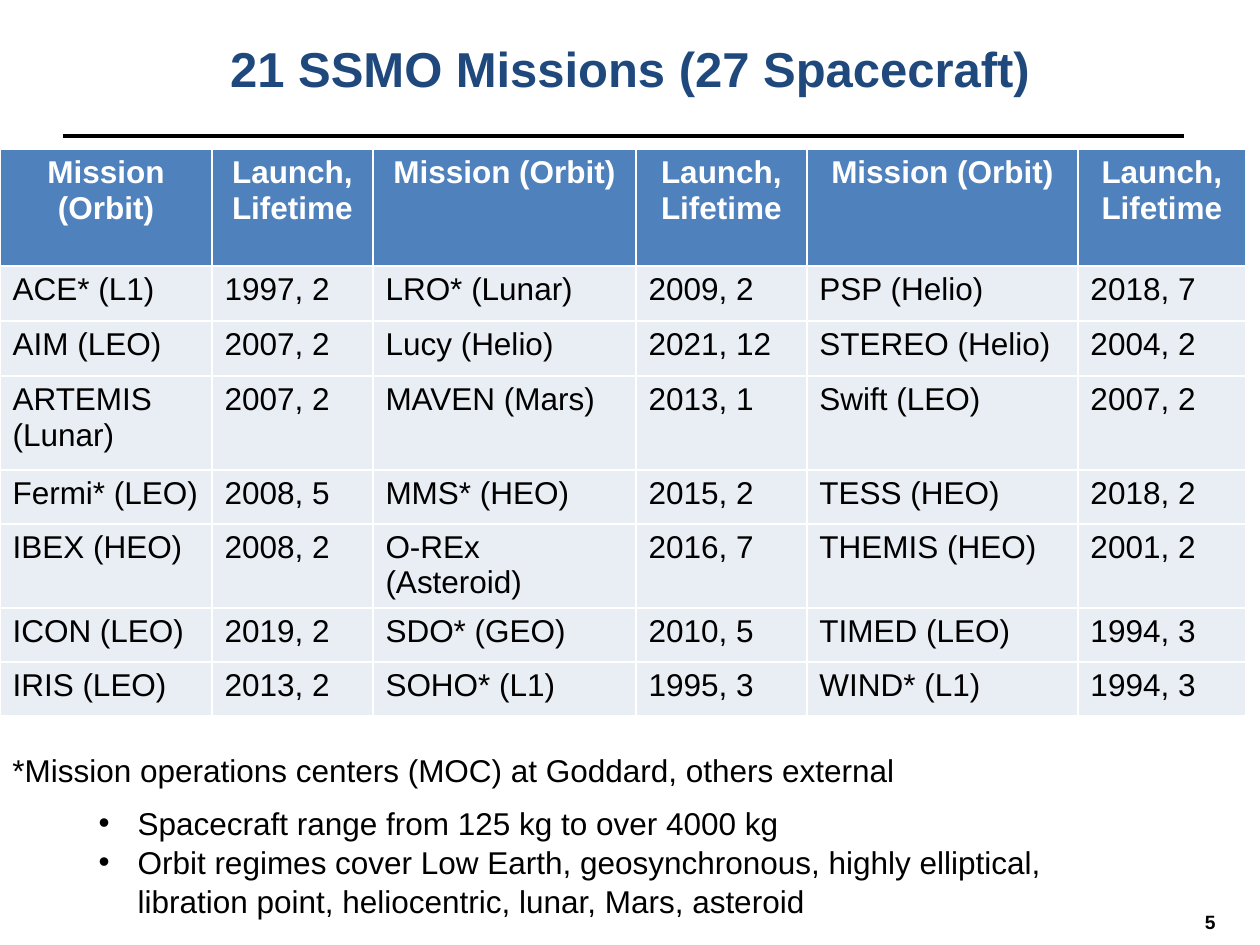
from lxml import etree
from pptx import Presentation
from pptx import util as u
from pptx.dml.color import RGBColor
from pptx.enum import shapes, text
from pptx.oxml.ns import qn

BLACK = RGBColor(0x00, 0x00, 0x00)
WHITE = RGBColor(0xFF, 0xFF, 0xFF)
NAVY = RGBColor(0x1F, 0x49, 0x7D)
HEADER_BLUE = RGBColor(0x4F, 0x81, 0xBD)
PALE_BLUE = RGBColor(0xE9, 0xED, 0xF4)

HEADER = ["Mission (Orbit)", "Launch, Lifetime"] * 3
MISSIONS = [
    ["ACE* (L1)", "1997, 2", "LRO* (Lunar)", "2009, 2", "PSP (Helio)", "2018, 7"],
    ["AIM (LEO)", "2007, 2", "Lucy (Helio)", "2021, 12", "STEREO (Helio)", "2004, 2"],
    ["ARTEMIS (Lunar)", "2007, 2", "MAVEN (Mars)", "2013, 1", "Swift (LEO)", "2007, 2"],
    ["Fermi* (LEO)", "2008, 5", "MMS* (HEO)", "2015, 2", "TESS (HEO)", "2018, 2"],
    ["IBEX (HEO)", "2008, 2", "O-REx (Asteroid)", "2016, 7", "THEMIS (HEO)", "2001, 2"],
    ["ICON (LEO)", "2019, 2", "SDO* (GEO)", "2010, 5", "TIMED (LEO)", "1994, 3"],
    ["IRIS (LEO)", "2013, 2", "SOHO* (L1)", "1995, 3", "WIND* (L1)", "1994, 3"],
]
COLUMN_WIDTHS = [212, 161, 263, 171, 271, 168]
ROW_HEIGHTS = [117, 55, 55, 94, 54, 84, 54, 54]
BULLETS = [
    "Spacecraft range from 125 kg to over 4000 kg",
    "Orbit regimes cover Low Earth, geosynchronous, highly elliptical, "
    "libration point, heliocentric, lunar, Mars, asteroid",
]


def px(length):
    """Turn px, 126 to the inch, into EMU."""
    return u.Emu(length * 914400 // 126)


class SlideBuilder:
    """Holds the text style and the slide being filled."""

    font_name = "Arial"
    body_size = 18

    def __init__(self, slide):
        self.slide = slide

    def style(self, paragraph, size=body_size, color=BLACK, bold=False,
              align=text.PP_ALIGN.LEFT):
        paragraph.alignment = align
        for run in paragraph.runs:
            run.font.name = self.font_name
            run.font.size = u.Pt(size)
            run.font.bold = bold
            run.font.color.rgb = color

    def place(self, shape, left, top, width, height):
        shape.left, shape.top = px(left), px(top)
        shape.width, shape.height = px(width), px(height)
        shape.text_frame.word_wrap = True
        shape.text_frame.auto_size = text.MSO_AUTO_SIZE.NONE

    def title(self, words, *box):
        shape = self.slide.shapes.title
        self.place(shape, *box)
        shape.text_frame.text = words
        shape.text_frame.vertical_anchor = text.MSO_ANCHOR.MIDDLE
        self.style(shape.text_frame.paragraphs[0], 28, NAVY, True, text.PP_ALIGN.CENTER)

    def bullets(self, items, *box):
        shape = self.slide.placeholders[1]
        self.place(shape, *box)
        frame = shape.text_frame
        frame.text = "\n".join(items)
        for paragraph in frame.paragraphs:
            paragraph.space_before = u.Pt(0)
            paragraph.line_spacing = 1.04
            properties = paragraph._p.get_or_add_pPr()
            properties.set("marL", str(px(39)))
            properties.set("indent", str(-px(39)))
            etree.SubElement(properties, qn("a:buChar")).set("char", "•")
            self.style(paragraph)

    def label(self, words, *box, anchor=text.MSO_ANCHOR.TOP, **style):
        shape = self.slide.shapes.add_textbox(0, 0, 0, 0)
        self.place(shape, *box)
        shape.text_frame.text = words
        shape.text_frame.vertical_anchor = anchor
        self.style(shape.text_frame.paragraphs[0], **style)

    def rule(self, left, top, right):
        line = self.slide.shapes.add_connector(
            shapes.MSO_CONNECTOR.STRAIGHT, px(left), px(top), px(right), px(top))
        line.line.color.rgb = BLACK
        line.line.width = u.Pt(1.75)
        etree.SubElement(line._element.spPr, qn("a:effectLst"))

    def table(self, rows, left, top, widths, heights):
        table = self.slide.shapes.add_table(
            len(rows), len(widths), px(left), px(top),
            px(sum(widths)), px(sum(heights))).table
        table.horz_banding = False
        for column, width in zip(table.columns, widths):
            column.width = px(width)
        for row, height in zip(table.rows, heights):
            row.height = px(height)
        for row_index, row in enumerate(rows):
            for column_index, words in enumerate(row):
                cell = table.cell(row_index, column_index)
                cell.text_frame.text = words
                cell.fill.solid()
                paragraph = cell.text_frame.paragraphs[0]
                if row_index == 0:
                    cell.fill.fore_color.rgb = HEADER_BLUE
                    self.style(paragraph, color=WHITE, bold=True,
                               align=text.PP_ALIGN.CENTER)
                else:
                    cell.fill.fore_color.rgb = PALE_BLUE
                    self.style(paragraph)


def main():
    presentation = Presentation()
    presentation.slide_width, presentation.slide_height = px(1260), px(945)
    slide = presentation.slides.add_slide(presentation.slide_layouts[1])
    builder = SlideBuilder(slide)
    builder.label("5", 766, 878, 462, 62, anchor=text.MSO_ANCHOR.BOTTOM,
                  size=11, bold=True, align=text.PP_ALIGN.RIGHT)
    builder.rule(63, 136, 1184)
    builder.title("21 SSMO Missions (27 Spacecraft)", 63, 0, 1134, 136)
    builder.table([HEADER] + MISSIONS, 0, 149, COLUMN_WIDTHS, ROW_HEIGHTS)
    builder.label("*Mission operations centers (MOC) at Goddard, others external",
                  0, 745, 921, 89)
    builder.bullets(BULLETS, 86, 796, 989, 165)
    presentation.save("out.pptx")


if __name__ == "__main__":
    main()
